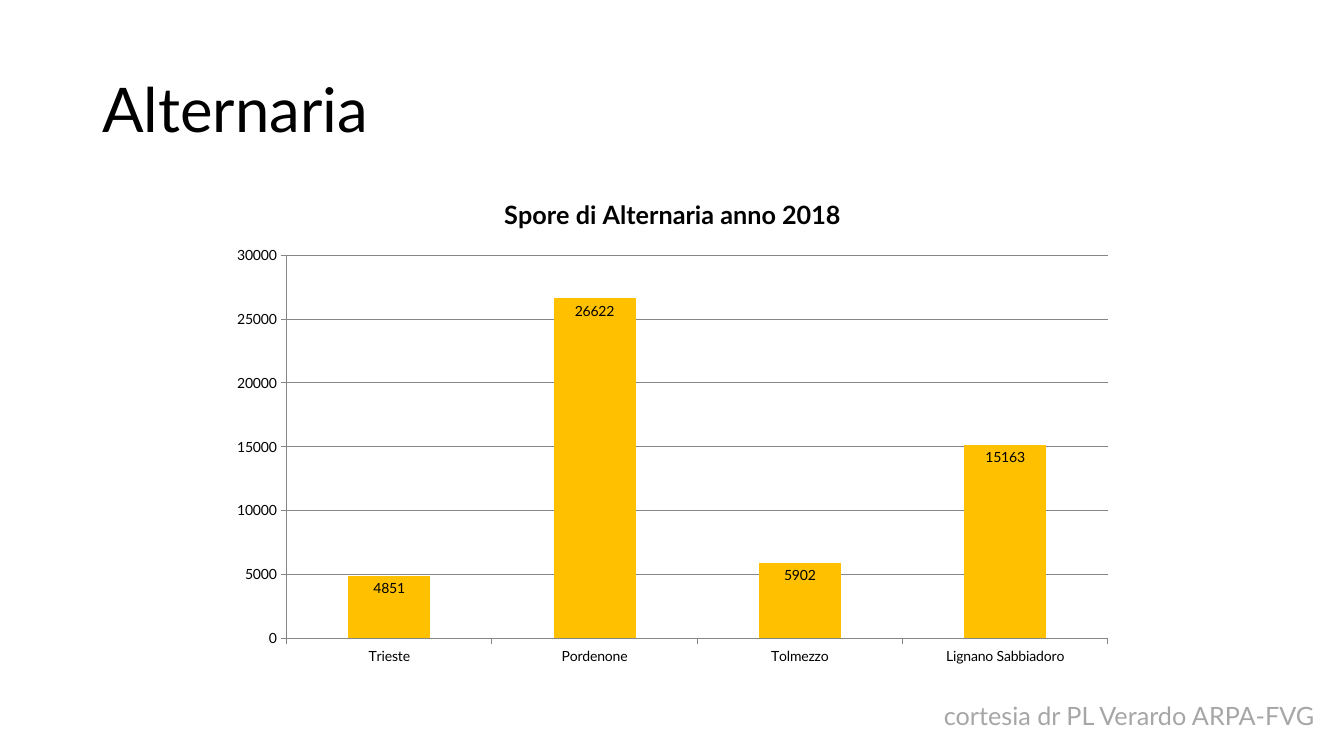
import pptx
import pptx.chart.data
import pptx.dml.color
import pptx.enum.chart
import pptx.enum.text
import pptx.util

PX = 914400 / 100.8
FACE = "Lato"
BLACK = pptx.dml.color.RGBColor(0x00, 0x00, 0x00)
GOLD = pptx.dml.color.RGBColor(0xFF, 0xC0, 0x00)
GREY = pptx.dml.color.RGBColor(0xA6, 0xA6, 0xA6)
RULE = pptx.dml.color.RGBColor(0x86, 0x86, 0x86)
SPORES = {
    "Trieste": 4851,
    "Pordenone": 26622,
    "Tolmezzo": 5902,
    "Lignano Sabbiadoro": 15163,
}


def scale(*sizes):
    """Turn px lengths into EMU."""
    return [pptx.util.Emu(round(size * PX)) for size in sizes]


def style(font, size, color, bold=False):
    """Set the face, size, colour and weight of a font."""
    font.name = FACE
    font.size = pptx.util.Pt(size)
    font.color.rgb = color
    font.bold = bold


def write(para, text, size, color, bold=False):
    """Add one styled run to a paragraph."""
    run = para.add_run()
    run.text = text
    style(run.font, size, color, bold)


def head(slide, box, text):
    """Place and fill the title."""
    title = slide.shapes.title
    title.left, title.top, title.width, title.height = scale(*box)
    frame = title.text_frame
    frame.vertical_anchor = pptx.enum.text.MSO_ANCHOR.MIDDLE
    para = frame.paragraphs[0]
    para.alignment = pptx.enum.text.PP_ALIGN.LEFT
    para.line_spacing = 0.9
    write(para, text, 44, BLACK)


def graph(slide, box, text, counts):
    """Draw the column chart of spore counts by town."""
    data = pptx.chart.data.CategoryChartData()
    data.categories = list(counts)
    data.add_series("Series 1", list(counts.values()))
    kind = pptx.enum.chart.XL_CHART_TYPE.COLUMN_CLUSTERED
    chart = slide.shapes.add_chart(kind, *scale(*box), data).chart
    style(chart.font, 10, BLACK)
    chart.has_legend = False
    chart.has_title = True
    write(chart.chart_title.text_frame.paragraphs[0], text, 18, BLACK, True)
    chart.chart_title.include_in_layout = False

    for axis in (chart.category_axis, chart.value_axis):
        axis.major_tick_mark = pptx.enum.chart.XL_TICK_MARK.OUTSIDE
        axis.format.line.color.rgb = RULE
        axis.format.line.width = pptx.util.Pt(0.75)
    axis.minimum_scale, axis.maximum_scale, axis.major_unit = 0, 30000, 5000
    axis.has_major_gridlines = True
    grid = axis.major_gridlines.format.line
    grid.color.rgb = RULE
    grid.width = pptx.util.Pt(0.75)

    plot = chart.plots[0]
    plot.gap_width = 150
    plot.vary_by_categories = False
    bars = plot.series[0]
    bars.format.fill.solid()
    bars.format.fill.fore_color.rgb = GOLD
    labels = bars.data_labels
    labels.show_value = True
    labels.position = pptx.enum.chart.XL_LABEL_POSITION.INSIDE_END
    labels.number_format = "0"
    labels.number_format_is_linked = False
    style(labels.font, 10, BLACK)


def credit(slide, box, text):
    """Place the source credit."""
    frame = slide.shapes.add_textbox(*scale(*box)).text_frame
    frame.word_wrap = True
    frame.auto_size = pptx.enum.text.MSO_AUTO_SIZE.SHAPE_TO_FIT_TEXT
    write(frame.paragraphs[0], text, 18, GREY)


def main():
    """Build and save the slide."""
    deck = pptx.Presentation()
    deck.slide_width, deck.slide_height = scale(1344, 756)
    slide = deck.slides.add_slide(deck.slide_layouts[5])
    head(slide, (92, 40, 1159, 146), "Alternaria")
    graph(slide, (219, 176, 907, 499), "Spore di Alternaria anno 2018", SPORES)
    credit(slide, (934, 695, 403, 41), "cortesia dr PL Verardo ARPA-FVG")
    deck.save("out.pptx")


if __name__ == "__main__":
    main()
